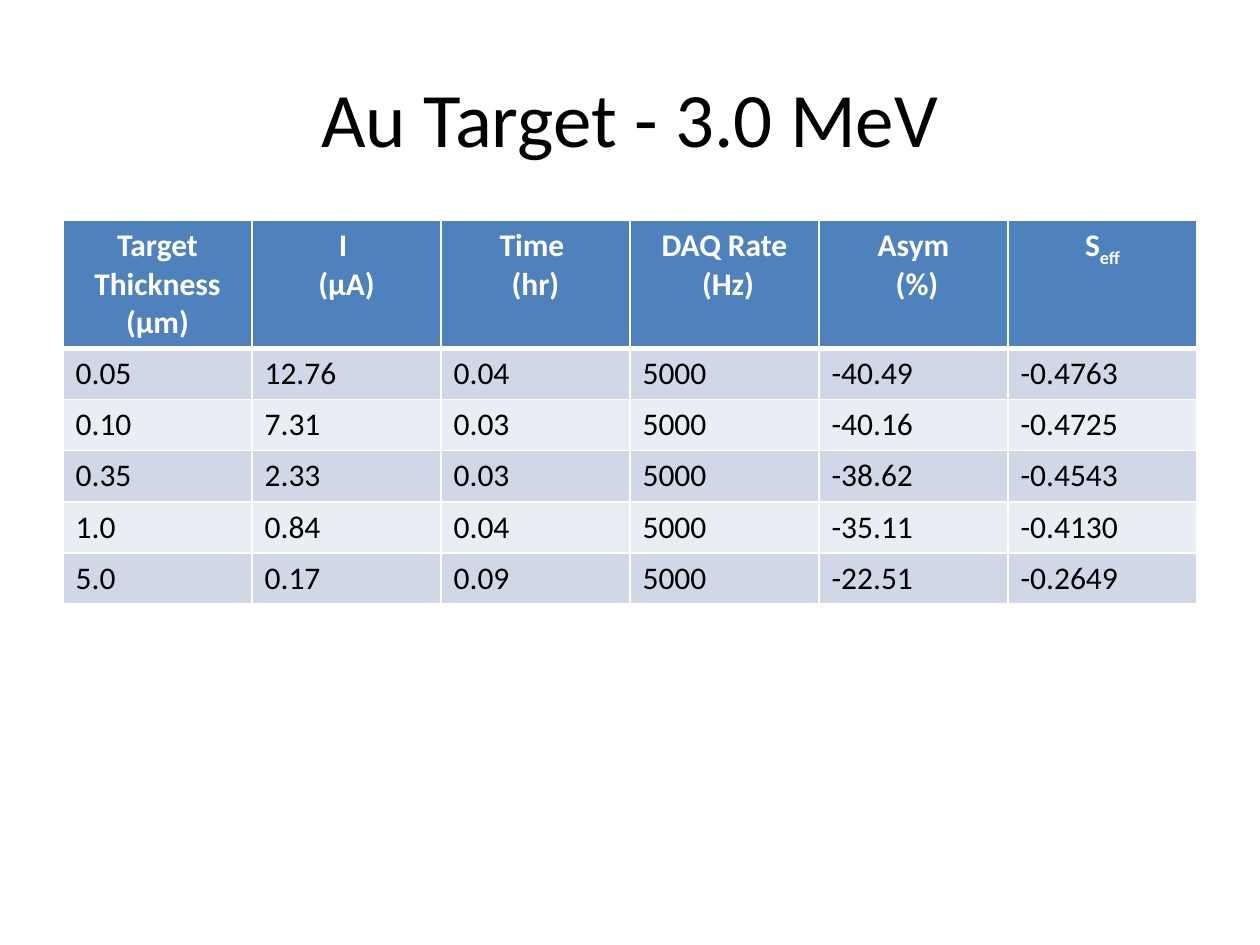
from lxml import etree
from pptx import Presentation
from pptx.dml.color import RGBColor
from pptx.enum.text import MSO_ANCHOR, PP_ALIGN
from pptx.oxml.ns import qn
from pptx.util import Pt

CENTER, LEFT = PP_ALIGN.CENTER, PP_ALIGN.LEFT
MIDDLE = MSO_ANCHOR.MIDDLE

BLACK = RGBColor(0x00, 0x00, 0x00)
WHITE = RGBColor(0xFF, 0xFF, 0xFF)
HEADER_BLUE = RGBColor(0x4F, 0x81, 0xBD)
BANDS = [RGBColor(0xD0, 0xD8, 0xE8), RGBColor(0xE9, 0xED, 0xF4)]
FONT = "Calibri"
SUBSCRIPT = "-25000"

TITLE = "Au Target - 3.0 MeV"
HEADERS = [
    [["Target Thickness (µm)"]],
    [["I "], ["(µA)"]],
    [["Time "], ["(hr)"]],
    [["DAQ Rate"], [" (Hz)"]],
    [["Asym"], [" (%)"]],
    [["S", "eff"]],
]
MEASUREMENTS = [
    ["0.05", "12.76", "0.04", "5000", "-40.49", "-0.4763"],
    ["0.10", "7.31", "0.03", "5000", "-40.16", "-0.4725"],
    ["0.35", "2.33", "0.03", "5000", "-38.62", "-0.4543"],
    ["1.0", "0.84", "0.04", "5000", "-35.11", "-0.4130"],
    ["5.0", "0.17", "0.09", "5000", "-22.51", "-0.2649"],
]

MARGIN, CONTENT_WIDTH = 36, 648
TITLE_TOP, TITLE_HEIGHT = 21.6, 90
TABLE_TOP, HEADER_HEIGHT, ROW_HEIGHT = 126, 72.6, 29.2


def add_run(paragraph, text, size, color, bold=False):
    run = paragraph.add_run()
    run.text = text
    run.font.name = FONT
    run.font.size = Pt(size)
    run.font.color.rgb = color
    run.font.bold = bold
    return run


def add_borders(cell, top=1, bottom=1):
    properties = cell._tc.get_or_add_tcPr()
    for side, width in (("L", 1), ("R", 1), ("T", top), ("B", bottom)):
        line = etree.SubElement(properties, qn(f"a:ln{side}"), w=str(Pt(width)))
        fill = etree.SubElement(line, qn("a:solidFill"))
        etree.SubElement(fill, qn("a:srgbClr"), val=str(WHITE))


def fill_cell(cell, paragraphs, fill, color, align, bold):
    cell.fill.solid()
    cell.fill.fore_color.rgb = fill
    frame = cell.text_frame
    for index, runs in enumerate(paragraphs):
        paragraph = frame.add_paragraph() if index else frame.paragraphs[0]
        paragraph.alignment = align
        for position, text in enumerate(runs):
            run = add_run(paragraph, text, 18, color, bold)
            if position:
                run.font._element.set("baseline", SUBSCRIPT)


def main():
    deck = Presentation()
    deck.slide_width, deck.slide_height = Pt(720), Pt(540)
    slide = deck.slides.add_slide(deck.slide_layouts[5])

    title = slide.shapes.title
    title.left, title.top = Pt(MARGIN), Pt(TITLE_TOP)
    title.width, title.height = Pt(CONTENT_WIDTH), Pt(TITLE_HEIGHT)
    title.text_frame.vertical_anchor = MIDDLE
    heading = title.text_frame.paragraphs[0]
    heading.alignment = CENTER
    add_run(heading, TITLE, 44, BLACK)

    row_count = len(MEASUREMENTS) + 1
    table_height = HEADER_HEIGHT + ROW_HEIGHT * len(MEASUREMENTS)
    results = slide.shapes.add_table(
        row_count, len(HEADERS), Pt(MARGIN), Pt(TABLE_TOP),
        Pt(CONTENT_WIDTH), Pt(table_height)).table
    for column in results.columns:
        column.width = Pt(CONTENT_WIDTH / len(HEADERS))
    for index, row in enumerate(results.rows):
        row.height = Pt(ROW_HEIGHT if index else HEADER_HEIGHT)

    for column, label in enumerate(HEADERS):
        cell = results.cell(0, column)
        add_borders(cell, bottom=3)
        fill_cell(cell, label, HEADER_BLUE, WHITE, CENTER, True)
    for index, values in enumerate(MEASUREMENTS):
        for column, value in enumerate(values):
            cell = results.cell(index + 1, column)
            add_borders(cell, top=1 if index else 3)
            fill_cell(cell, [[value]], BANDS[index % 2], BLACK, LEFT, False)

    deck.save("out.pptx")


if __name__ == "__main__":
    main()
